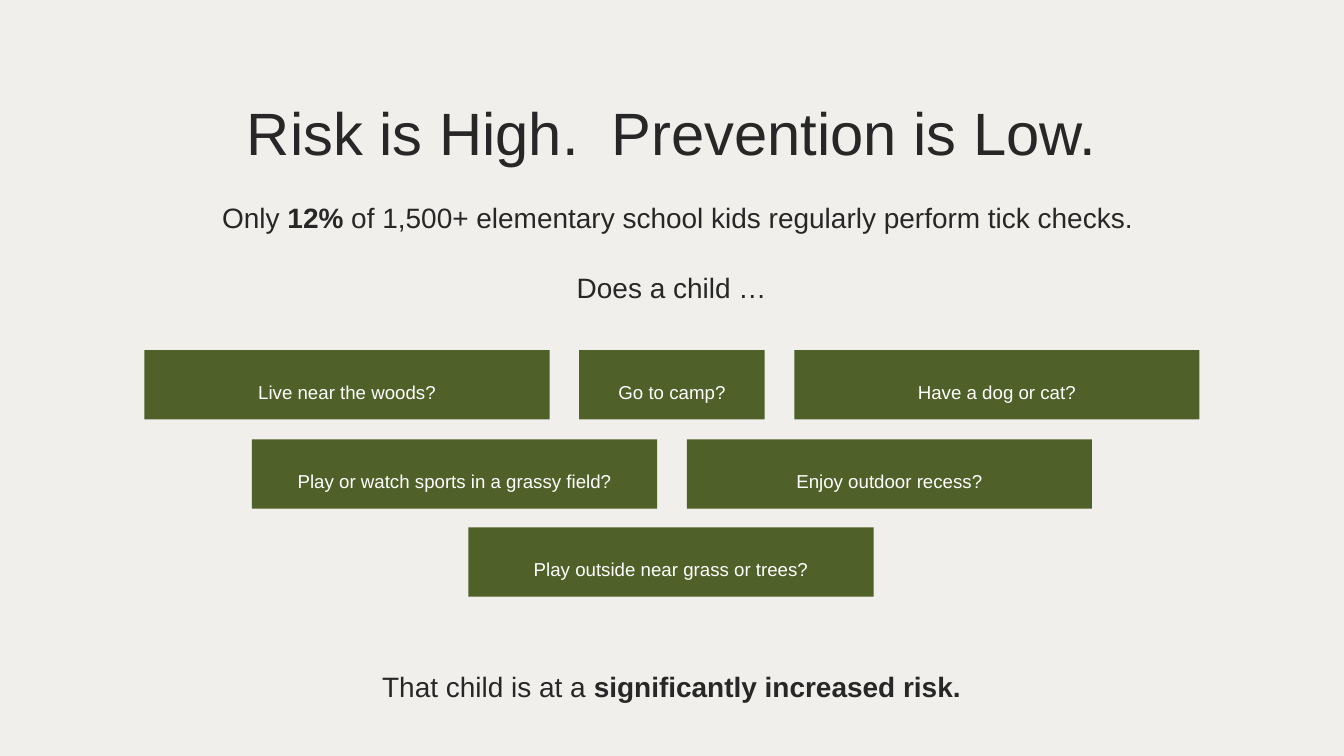
import pptx
import pptx.dml.color
import pptx.enum.shapes
import pptx.enum.text
import pptx.util
from pptx.util import Inches

BACKGROUND = pptx.dml.color.RGBColor(0xF0, 0xEF, 0xEC)
DARK = pptx.dml.color.RGBColor(0x27, 0x27, 0x27)
GREEN = pptx.dml.color.RGBColor(0x4F, 0x61, 0x28)
WHITE = pptx.dml.color.RGBColor(0xFF, 0xFF, 0xFF)

presentation = pptx.Presentation()
presentation.slide_width = Inches(20)
presentation.slide_height = Inches(11.25)
slide = presentation.slides.add_slide(presentation.slide_layouts[6])
slide.background.fill.solid()
slide.background.fill.fore_color.rgb = BACKGROUND


def write_line(shape, runs, size, color, line_spacing, side=0, top=0):
    """Fill a shape with one centred paragraph of (text, bold) runs."""
    frame = shape.text_frame
    frame.word_wrap = True
    frame.vertical_anchor = pptx.enum.text.MSO_ANCHOR.TOP
    frame.margin_left = frame.margin_right = Inches(side)
    frame.margin_top = Inches(top)
    frame.margin_bottom = 0
    paragraph = frame.paragraphs[0]
    paragraph.alignment = pptx.enum.text.PP_ALIGN.CENTER
    paragraph.line_spacing = line_spacing
    for text, bold in runs:
        run = paragraph.add_run()
        run.text = text
        run.font.name = "Arial"
        run.font.size = pptx.util.Pt(size)
        run.font.bold = bold
        run.font.color.rgb = color


# Title and statements: left, top, width, height, size, runs
statements = [
    (3.43, 1.21, 13.13, 0.99, 64, [("Risk is High.  Prevention is Low.", False)]),
    (2.5, 2.88, 15.17, 0.5, 30, [
        ("Only ", False),
        ("12%", True),
        (" of 1,500+ elementary school kids regularly perform tick checks.", False),
    ]),
    (3.43, 3.93, 13.13, 0.51, 30, [("Does a child …", False)]),
    (3.43, 9.87, 13.13, 0.51, 30, [
        ("That child is at a ", False),
        ("significantly increased risk.", True),
    ]),
]
for left, top, width, height, size, runs in statements:
    text_box = slide.shapes.add_textbox(
        Inches(left), Inches(top), Inches(width), Inches(height))
    write_line(text_box, runs, size, DARK, 1.2)

# Rows of question boxes, each laid out from its left edge with equal gaps
WIDE, NARROW = 6.03, 2.76
BOX_HEIGHT, GAP = 1.03, 0.44
question_rows = [
    (2.15, 5.21, [("Live near the woods?", WIDE),
                  ("Go to camp?", NARROW),
                  ("Have a dog or cat?", WIDE)]),
    (3.75, 6.54, [("Play or watch sports in a grassy field?", WIDE),
                  ("Enjoy outdoor recess?", WIDE)]),
    (6.97, 7.85, [("Play outside near grass or trees?", WIDE)]),
]
for left, top, questions in question_rows:
    for question, width in questions:
        box = slide.shapes.add_shape(
            pptx.enum.shapes.MSO_SHAPE.RECTANGLE,
            Inches(left), Inches(top), Inches(width), Inches(BOX_HEIGHT))
        box.shadow.inherit = False
        box.fill.solid()
        box.fill.fore_color.rgb = GREEN
        box.line.fill.background()
        write_line(box, [(question, False)], 20, WHITE, 1.4, side=0.17, top=0.32)
        left += width + GAP

presentation.save("out.pptx")
